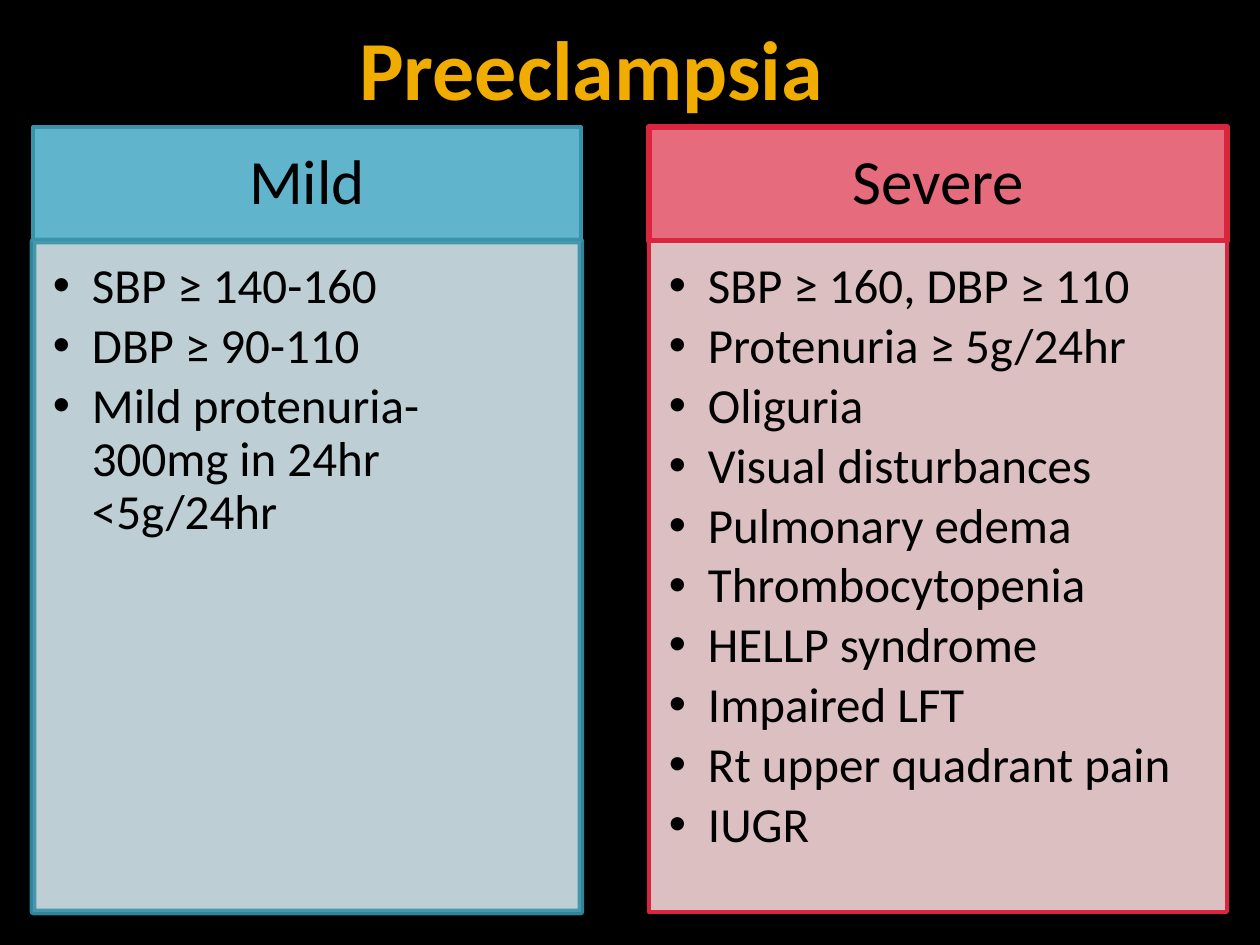
from dataclasses import dataclass

from lxml import etree
from pptx import Presentation
from pptx.dml.color import RGBColor
from pptx.enum.text import MSO_ANCHOR, MSO_AUTO_SIZE, PP_ALIGN
from pptx.oxml.ns import qn
from pptx.util import Pt

TOP, MIDDLE = MSO_ANCHOR.TOP, MSO_ANCHOR.MIDDLE
LEFT, CENTER = PP_ALIGN.LEFT, PP_ALIGN.CENTER
NO_FIT = MSO_AUTO_SIZE.NONE
SCALE = 914400 / 126
COMPARISON_LAYOUT = 4


@dataclass(frozen=True)
class Theme:
    font: str = "Calibri"
    background: str = "000000"
    title: str = "F0AD00"
    text: str = "000000"
    title_size: int = 48
    heading_size: int = 36
    list_size: int = 28
    thin: float = 2.25
    thick: float = 3.78
    opacity: int = 90


@dataclass(frozen=True)
class Column:
    heading: str
    items: tuple
    heading_fill: str
    list_fill: str
    border: str
    heading_line: float
    list_line: float
    line_opacity: int


THEME = Theme()
TITLE_BOX = (346, 10, 536, 115)
COLUMN_BOXES = ((33, 127, 548, 785), (649, 127, 578, 785))
HEADING_HEIGHT = 114
HEADING_INSETS = (35, 20, 35, 20)
LIST_INSETS = (20, 20, 28, 30)
LIST_INDENT = 39
COLUMNS = (
    Column("Mild",
           ("SBP ≥ 140-160", "DBP ≥ 90-110", "Mild protenuria- 300mg in 24hr <5g/24hr"),
           "60B5CC", "D2E5EC", "3792AA", THEME.thin, THEME.thick, THEME.opacity),
    Column("Severe",
           ("SBP ≥ 160, DBP ≥ 110", "Protenuria ≥ 5g/24hr", "Oliguria",
            "Visual disturbances", "Pulmonary edema", "Thrombocytopenia",
            "HELLP syndrome", "Impaired LFT", "Rt upper quadrant pain", "IUGR"),
           "E66C7D", "F5D4D7", "D9253E", THEME.thick, THEME.thin, 100),
)


def px(length):
    return round(length * SCALE)


def set_values(target, values):
    for name, value in values.items():
        setattr(target, name, value)


def place(shape, box):
    set_values(shape, dict(zip(("left", "top", "width", "height"), map(px, box))))


def paint(fill, color, opacity=100):
    fill.solid()
    fill.fore_color.rgb = RGBColor.from_string(color)
    if opacity < 100:
        color_node = fill._xPr.find(qn("a:solidFill"))[0]
        etree.SubElement(color_node, qn("a:alpha"), val=str(opacity * 1000))


def outline(shape, color, width, opacity=100):
    shape.line.width = Pt(width)
    paint(shape.line.fill, color, opacity)


def write(shape, lines, size, color, anchor, align, insets, bold=False,
          spacing=1.0, after=0, indent=0):
    frame = shape.text_frame
    frame.text = "\n".join(lines)
    sides = ("margin_left", "margin_top", "margin_right", "margin_bottom")
    set_values(frame, {"word_wrap": True, "auto_size": NO_FIT, "vertical_anchor": anchor,
                       **dict(zip(sides, map(px, insets)))})
    for para in frame.paragraphs:
        set_values(para, {"alignment": align, "line_spacing": spacing,
                          "space_before": Pt(0), "space_after": Pt(after)})
        properties = para._p.get_or_add_pPr()
        properties.set("marL", str(px(indent)))
        properties.set("indent", str(-px(indent)))
        for span in para.runs:
            set_values(span.font, {"name": THEME.font, "size": Pt(size), "bold": bold})
            span.font.color.rgb = RGBColor.from_string(color)


def add_title(shape, box):
    place(shape, box)
    write(shape, ["Preeclampsia"], THEME.title_size, THEME.title, TOP, LEFT,
          (13, 6, 13, 6), bold=True)


def add_column(heading, listing, column, box):
    left, top, width, height = box
    place(heading, (left, top, width, HEADING_HEIGHT))
    place(listing, (left, top + HEADING_HEIGHT, width, height - HEADING_HEIGHT))
    paint(heading.fill, column.heading_fill)
    paint(listing.fill, column.list_fill, THEME.opacity)
    outline(heading, column.border, column.heading_line)
    outline(listing, column.border, column.list_line, column.line_opacity)
    write(heading, [column.heading], THEME.heading_size, THEME.text, MIDDLE, CENTER,
          HEADING_INSETS, spacing=0.9)
    write(listing, column.items, THEME.list_size, THEME.text, TOP, LEFT,
          LIST_INSETS, spacing=0.9, after=4, indent=LIST_INDENT)


def main():
    deck = Presentation()
    set_values(deck, {"slide_width": px(1260), "slide_height": px(945)})
    page = deck.slides.add_slide(deck.slide_layouts[COMPARISON_LAYOUT])
    paint(page.background.fill, THEME.background)
    title, *parts = page.placeholders
    add_title(title, TITLE_BOX)
    for heading, listing, column, box in zip(parts[::2], parts[1::2], COLUMNS, COLUMN_BOXES):
        add_column(heading, listing, column, box)
    deck.save("out.pptx")


if __name__ == "__main__":
    main()
